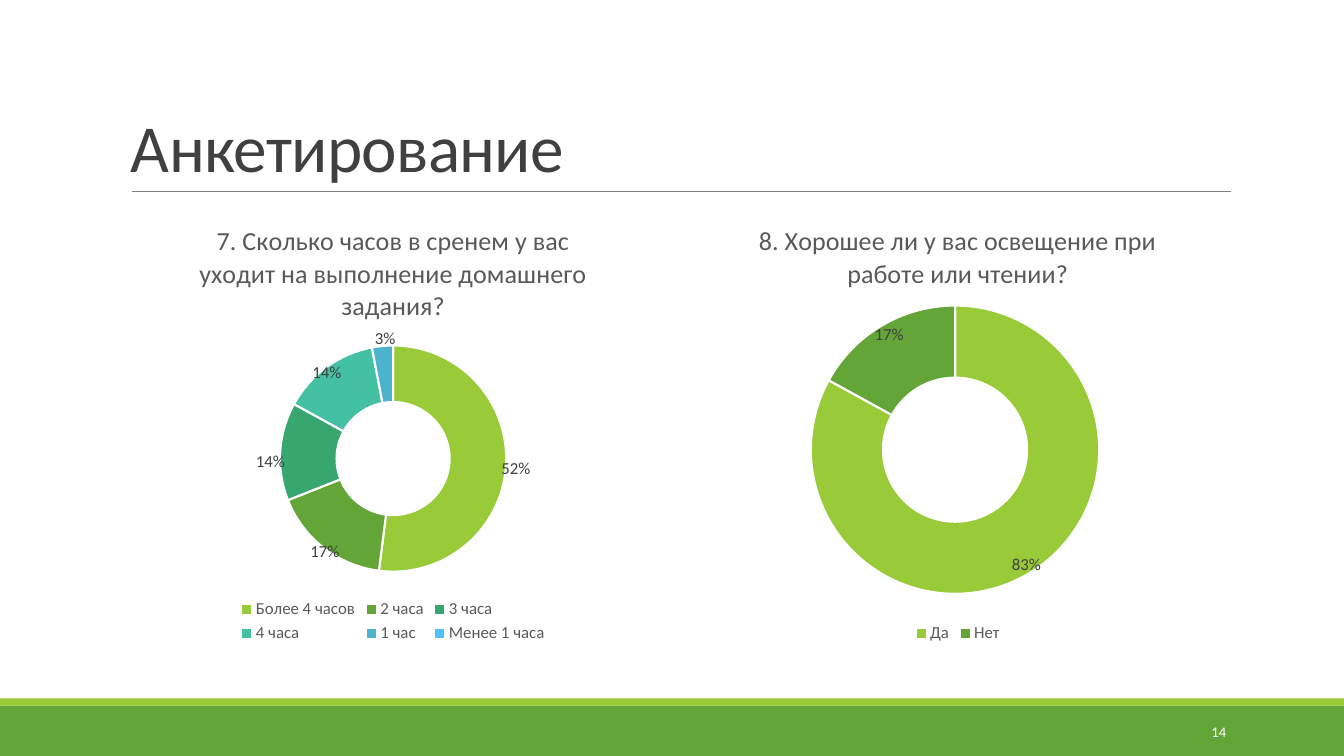
import copy

import lxml.etree
import pptx
import pptx.chart.data
import pptx.dml.color
import pptx.enum.chart
import pptx.enum.shapes
import pptx.enum.text
import pptx.oxml
import pptx.oxml.ns
import pptx.util

Inches = pptx.util.Inches
Pt = pptx.util.Pt
qn = pptx.oxml.ns.qn

FONT = "Calibri"
COLORS = {
    "lime": "99CB38", "green": "63A537", "emerald": "37A76F", "teal": "44C1A3",
    "blue": "4EB3CF", "sky": "51C3F9", "white": "FFFFFF", "rule": "808080",
    "dark": "404040", "grey": "595959",
}
SLICE_COLORS = ["lime", "green", "emerald", "teal", "blue", "sky"]
TITLE = "Анкетирование"
PAGE = "14"
BANDS = [("green", 7, 0.5), ("lime", 6.93, 0.07)]
QUESTIONS = [
    {
        "title": "7. Сколько часов в сренем у вас уходит на выполнение домашнего задания?",
        "series": "7. Сколько часов в сренем у вас уходит на выполнение домашнего задания?",
        "answers": [("Более 4 часов", 0.52), ("2 часа", 0.17), ("3 часа", 0.14),
                    ("4 часа", 0.14), ("1 час", 0.03), ("Менее 1 часа", 0)],
        "plot": (0.29, 0.32, 0.42, 0.51),
        "offsets": [(0.07, 0.01), (-0.03, 0.06), (-0.07, 0.02), (-0.03, -0.04), (0, -0.08), None],
    },
    {
        "title": "8. Хорошее ли у вас освещение при работе или чтении?",
        "series": "Series 1",
        "answers": [("Да", 0.83), ("Нет", 0.17)],
        "plot": (0.23, 0.23, 0.53, 0.65),
        "offsets": [(0.03, 0.05), (-0.02, -0.05)],
    },
]
CHART_LEFT, CHART_TOP, CHART_W, CHART_H, CHART_STEP = 1.2, 2.02, 5.4, 4.4, 5.6


def rgb(name):
    """Return the named colour."""
    return pptx.dml.color.RGBColor.from_string(COLORS[name])


def style(font, size, color):
    """Apply the slide font with a size and a colour."""
    font.name, font.size, font.bold = FONT, Pt(size), False
    font.color.rgb = rgb(color)


def add_text(slide, text, box, size, color, anchor, align):
    """Add a one-line text box."""
    s = slide.shapes.add_textbox(*map(Inches, box))
    tf = s.text_frame
    tf.word_wrap = True
    tf.vertical_anchor = anchor
    p = tf.paragraphs[0]
    p.text = text
    p.alignment = align
    style(p.runs[0].font, size, color)
    return s


def manual_layout(values, inner=False):
    """Build a chart layout element from fractions of the chart."""
    layout = lxml.etree.Element(qn("c:layout"))
    manual = lxml.etree.SubElement(layout, qn("c:manualLayout"))
    settings = list(zip("xywh", values))
    if inner:
        settings = [("layoutTarget", "inner"), ("xMode", "edge"), ("yMode", "edge")] + settings
    for tag, value in settings:
        lxml.etree.SubElement(manual, qn("c:" + tag)).set("val", str(value))
    return layout


def place_labels(labels, offsets):
    """Shift each slice label, or delete it where no offset is given."""
    shared = [e for e in labels if e.tag != qn("c:showLeaderLines")]
    for i, offset in enumerate(offsets):
        label = lxml.etree.Element(qn("c:dLbl"))
        lxml.etree.SubElement(label, qn("c:idx")).set("val", str(i))
        if offset is None:
            lxml.etree.SubElement(label, qn("c:delete")).set("val", "1")
        else:
            label.append(manual_layout(offset))
            label.extend(copy.deepcopy(shared))
        labels.insert(i, label)


def add_doughnut(slide, question, left):
    """Add one survey question as a doughnut chart."""
    data = pptx.chart.data.CategoryChartData(number_format="0%")
    data.categories = [name for name, _ in question["answers"]]
    data.add_series(question["series"], [value for _, value in question["answers"]])
    box = map(Inches, (left, CHART_TOP, CHART_W, CHART_H))
    chart = slide.shapes.add_chart(pptx.enum.chart.XL_CHART_TYPE.DOUGHNUT, *box, data).chart
    style(chart.font, 10, "dark")

    chart.has_title = True
    tf = chart.chart_title.text_frame
    tf.text = question["title"]
    style(tf.paragraphs[0].runs[0].font, 18.6, "grey")
    chart.chart_title.include_in_layout = False

    chart.has_legend = True
    chart.legend.position = pptx.enum.chart.XL_LEGEND_POSITION.BOTTOM
    chart.legend.include_in_layout = False
    style(chart.legend.font, 12, "grey")

    plot = chart.plots[0]
    plot.vary_by_categories = True
    series = plot.series[0]
    for i, color in enumerate(SLICE_COLORS[:len(question["answers"])]):
        fmt = series.points[i].format
        fmt.fill.solid()
        fmt.fill.fore_color.rgb = rgb(color)
        fmt.line.color.rgb = rgb("white")
        fmt.line.width = Pt(1.5)

    labels = series.data_labels
    labels.show_value = True
    labels.show_percentage = False
    labels.number_format = "0%"
    labels.number_format_is_linked = False
    style(labels.font, 12, "dark")
    place_labels(chart.element.xpath(".//c:ser/c:dLbls")[0], question["offsets"])

    chart.element.xpath(".//c:holeSize")[0].set("val", "75")
    area = chart.element.xpath(".//c:plotArea")[0]
    for old in area.findall(qn("c:layout")):
        area.remove(old)
    area.insert(0, manual_layout(question["plot"], inner=True))


def main():
    """Build the survey slide."""
    prs = pptx.Presentation()
    prs.slide_width, prs.slide_height = Inches(13.33), Inches(7.5)
    slide = prs.slides.add_slide(prs.slide_layouts[6])
    for color, top, height in BANDS:
        s = slide.shapes.add_shape(pptx.enum.shapes.MSO_SHAPE.RECTANGLE, 0, Inches(top),
                                   prs.slide_width, Inches(height))
        s.shadow.inherit = False
        s.fill.solid()
        s.fill.fore_color.rgb = rgb(color)
        s.line.fill.background()

    rule = slide.shapes.add_connector(pptx.enum.shapes.MSO_CONNECTOR.STRAIGHT,
                                      *map(Inches, (1.31, 1.9, 12.21, 1.9)))
    rule.line.color.rgb = rgb("rule")
    rule.line.width = Pt(0.5)
    lxml.etree.SubElement(rule.element.spPr, qn("a:effectLst"))

    anchors, aligns = pptx.enum.text.MSO_ANCHOR, pptx.enum.text.PP_ALIGN
    s = add_text(slide, TITLE, (1.2, 0.31, 11, 1.59), 48, "dark", anchors.BOTTOM, aligns.LEFT)
    s.text_frame.paragraphs[0].line_spacing = 0.85
    s.element.xpath(".//a:rPr")[0].set("spc", "-50")
    for i, question in enumerate(QUESTIONS):
        add_doughnut(slide, question, CHART_LEFT + i * CHART_STEP)
    add_text(slide, PAGE, (10.83, 7.06, 1.43, 0.4), 10.5, "white", anchors.MIDDLE, aligns.RIGHT)
    prs.save("out.pptx")


if __name__ == "__main__":
    main()
